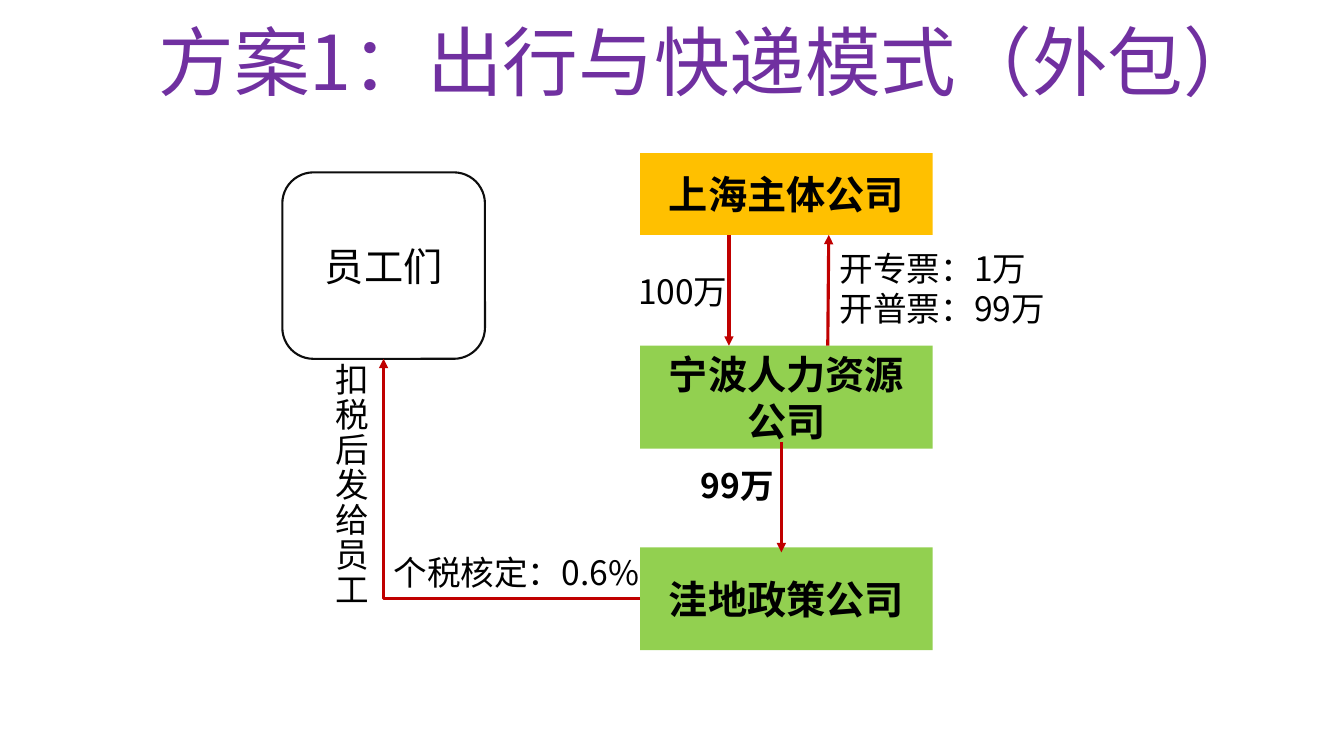
from lxml import etree
from pptx import Presentation
from pptx.dml.color import RGBColor
from pptx.enum.shapes import MSO_CONNECTOR as LINE, MSO_SHAPE as SHAPE
from pptx.enum.text import MSO_ANCHOR as ANCHOR, PP_ALIGN as ALIGN
from pptx.oxml.ns import qn
from pptx.util import Inches, Pt

FONT = "Noto Sans CJK SC"
COLORS = {
    "title": "7030A0", "text": "000000", "outline": "0D0D0D",
    "client": "FFC000", "provider": "92D050", "flow": "C00000",
}


def color(key):
    return RGBColor.from_string(COLORS[key])


def write(frame, text, size, key="text", bold=False, align=ALIGN.LEFT, spacing=None):
    """Fill a text frame; spacing defaults to 1.2 times the text size."""
    frame.text = text
    frame.word_wrap = True
    for paragraph in frame.paragraphs:
        paragraph.alignment = align
        paragraph.line_spacing = spacing or Pt(size * 1.2)
        for run in paragraph.runs:
            run.font.size = Pt(size)
            run.font.bold = bold
            run.font.name = FONT
            run.font.color.rgb = color(key)
            east_asian = etree.SubElement(run.font._element, qn("a:ea"))
            east_asian.set("typeface", FONT)


def add_title(slide, left, top, width, height):
    title = slide.shapes.title
    title.left, title.top = Inches(left), Inches(top)
    title.width, title.height = Inches(width), Inches(height)
    title.text_frame.vertical_anchor = ANCHOR.MIDDLE
    write(title.text_frame, "方案1：出行与快递模式（外包）", 54, "title",
          align=ALIGN.CENTER, spacing=0.9)


def add_party(slide, box, text, fill=None, kind=SHAPE.RECTANGLE):
    """Draw a party: filled and bold, or outlined when it has no fill."""
    party = slide.shapes.add_shape(kind, *map(Inches, box))
    party.shadow.inherit = False
    if fill:
        party.fill.solid()
        party.fill.fore_color.rgb = color(fill)
        party.line.fill.background()
    else:
        party.fill.background()
        party.line.color.rgb = color("outline")
        party.line.width = Pt(1.5)
    party.text_frame.vertical_anchor = ANCHOR.MIDDLE
    write(party.text_frame, text, 28, bold=bool(fill), align=ALIGN.CENTER)


def add_flow(slide, start, end, kind=LINE.STRAIGHT):
    flow = slide.shapes.add_connector(kind, *map(Inches, start + end))
    flow.line.color.rgb = color("flow")
    flow.line.width = Pt(2.25)
    properties = flow._element.spPr
    if kind == LINE.ELBOW:  # a single corner
        properties.find(qn("a:prstGeom")).set("prst", "bentConnector2")
    etree.SubElement(flow.line._get_or_add_ln(), qn("a:tailEnd")).set("type", "triangle")
    etree.SubElement(properties, qn("a:effectLst"))


def add_label(slide, box, text, bold=False, spacing=None):
    label = slide.shapes.add_textbox(*map(Inches, box))
    write(label.text_frame, text, 24, bold=bold, spacing=spacing)


def add_companies(slide, left, top, width):
    """Column of three companies with the payments between them."""
    for text, offset, height, fill in (
        ("上海主体公司", 0, 0.81, "client"),
        ("宁波人力资源公司", 1.91, 1.02, "provider"),
        ("洼地政策公司", 3.91, 1.02, "provider"),
    ):
        add_party(slide, (left, top + offset, width, height), text, fill)

    for x1, y1, x2, y2 in (
        (0.88, 0.81, 0.88, 1.91),
        (1.86, 1.91, 1.87, 0.81),
        (1.4, 2.87, 1.4, 3.96),
    ):
        add_flow(slide, (left + x1, top + y1), (left + x2, top + y2))

    for text, x, y, label_width, height, bold in (
        ("100万", -0.12, 1.12, 1.23, 0.5, False),
        ("开专票：1万\n开普票：99万", 1.88, 0.89, 2.83, 0.91, False),
        ("99万", 0.5, 3.04, 0.96, 0.5, True),
    ):
        add_label(slide, (left + x, top + y, label_width, height), text, bold)


def add_employees(slide, left, top, width, height):
    """Employees and the after-tax payment that reaches them."""
    add_party(slide, (left, top, width, height), "员工们", kind=SHAPE.ROUNDED_RECTANGLE)
    bottom = top + height
    pay_x = left + width / 2
    add_flow(slide, (left + 3.55, bottom + 2.38), (pay_x, bottom), LINE.ELBOW)
    add_label(slide, (pay_x, bottom + 1.87, 2.68, 0.5), "个税核定：0.6%")
    add_label(slide, (pay_x - 0.58, bottom, 0.58, 2.56), "扣税后发给员工", spacing=Pt(25))


def main():
    deck = Presentation()
    deck.slide_width, deck.slide_height = Inches(13.33), Inches(7.5)
    slide = deck.slides.add_slide(deck.slide_layouts[5])
    add_title(slide, 1.28, 0.19, 11.5, 0.93)
    add_companies(slide, 6.35, 1.52, 2.9)
    add_employees(slide, 2.8, 1.71, 2.01, 1.85)
    deck.save("out.pptx")


if __name__ == "__main__":
    main()
